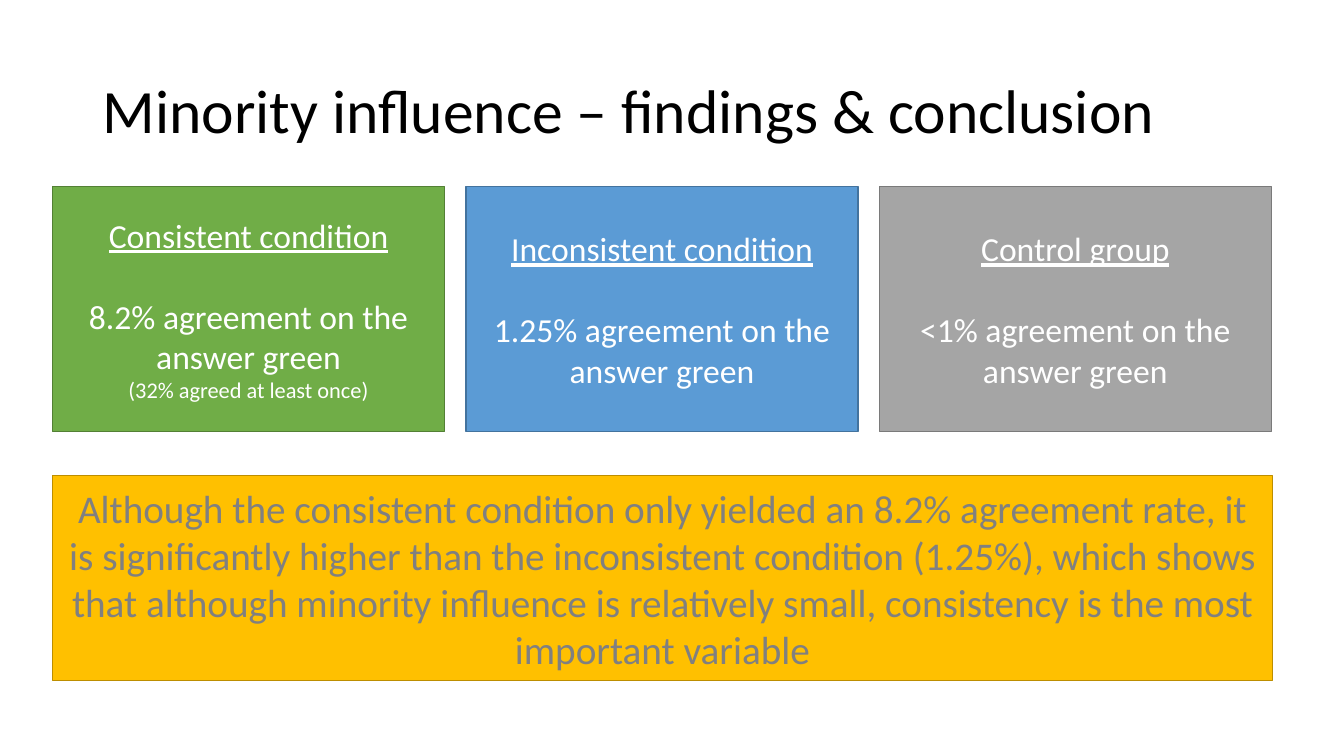
from pptx import Presentation
from pptx.dml.color import RGBColor
from pptx.enum.shapes import MSO_SHAPE
from pptx.enum.text import MSO_ANCHOR, PP_ALIGN
from pptx.util import Inches, Pt

RECT = MSO_SHAPE.RECTANGLE
MIDDLE = MSO_ANCHOR.MIDDLE
LEFT, CENTER = PP_ALIGN.LEFT, PP_ALIGN.CENTER

BLACK = RGBColor(0x00, 0x00, 0x00)
WHITE = RGBColor(0xFF, 0xFF, 0xFF)
TEXT_GRAY = RGBColor(0x80, 0x80, 0x80)
GREEN = RGBColor(0x70, 0xAD, 0x47)
GREEN_EDGE = RGBColor(0x53, 0x80, 0x35)
BLUE = RGBColor(0x5B, 0x9B, 0xD5)
BLUE_EDGE = RGBColor(0x43, 0x73, 0x9E)
GRAY = RGBColor(0xA5, 0xA5, 0xA5)
GRAY_EDGE = RGBColor(0x7A, 0x7A, 0x7A)
GOLD = RGBColor(0xFF, 0xC0, 0x00)
GOLD_EDGE = RGBColor(0xBD, 0x8E, 0x00)

MARGIN, CARD_TOP = 0.52, 1.85
CARD_W, CARD_H, CARD_PITCH = 3.89, 2.43, 4.1
HEADING_GAP = 29.3

CARDS = [
    ("Consistent condition", "8.2% agreement on the answer green",
     "(32% agreed at least once)", GREEN, GREEN_EDGE),
    ("Inconsistent condition", "1.25% agreement on the answer green",
     None, BLUE, BLUE_EDGE),
    ("Control group", "<1% agreement on the answer green",
     None, GRAY, GRAY_EDGE),
]
CONCLUSION = (
    "Although the consistent condition only yielded an 8.2% agreement rate, "
    "it is significantly higher than the inconsistent condition (1.25%), "
    "which shows that although minority influence is relatively small, "
    "consistency is the most important variable"
)


class SlideBuilder:
    font = "Calibri"

    def __init__(self, s):
        self.s = s

    def frame(self, sp):
        """Prepare the shape's text frame: wrapped and centred vertically."""
        tf = sp.text_frame
        tf.word_wrap = True
        tf.vertical_anchor = MIDDLE
        return tf

    def paragraph(self, tf, text, size, color, align=CENTER, underline=False):
        p = tf.paragraphs[0]
        if p.runs:
            p = tf.add_paragraph()
        p.alignment = align
        r = p.add_run()
        r.text = text
        r.font.name = self.font
        r.font.size = Pt(size)
        r.font.color.rgb = color
        r.font.underline = underline
        return p

    def title(self, text, x, y, w, h):
        sp = self.s.shapes.add_textbox(Inches(x), Inches(y), Inches(w), Inches(h))
        p = self.paragraph(self.frame(sp), text, 44, BLACK, LEFT)
        p.line_spacing = 0.9

    def box(self, x, y, w, h, fill, edge):
        """Add an outlined rectangle and return its text frame."""
        sp = self.s.shapes.add_shape(RECT, Inches(x), Inches(y), Inches(w), Inches(h))
        sp.shadow.inherit = False
        sp.fill.solid()
        sp.fill.fore_color.rgb = fill
        sp.line.color.rgb = edge
        sp.line.width = Pt(1)
        return self.frame(sp)

    def card(self, x, heading, finding, note, fill, edge):
        tf = self.box(x, CARD_TOP, CARD_W, CARD_H, fill, edge)
        p = self.paragraph(tf, heading, 24, WHITE, underline=True)
        p.space_after = Pt(HEADING_GAP)
        self.paragraph(tf, finding, 24, WHITE)
        if note:
            self.paragraph(tf, note, 16, WHITE)


def main():
    prs = Presentation()
    prs.slide_width, prs.slide_height = Inches(13.33), Inches(7.5)
    b = SlideBuilder(prs.slides.add_slide(prs.slide_layouts[6]))

    b.title("Minority influence – findings & conclusion", 0.92, 0.4, 11.5, 1.45)
    for i, card in enumerate(CARDS):
        b.card(MARGIN + i * CARD_PITCH, *card)
    tf = b.box(MARGIN, 4.72, 12.1, 2.03, GOLD, GOLD_EDGE)
    b.paragraph(tf, CONCLUSION, 28, TEXT_GRAY)

    prs.save("out.pptx")


if __name__ == "__main__":
    main()
